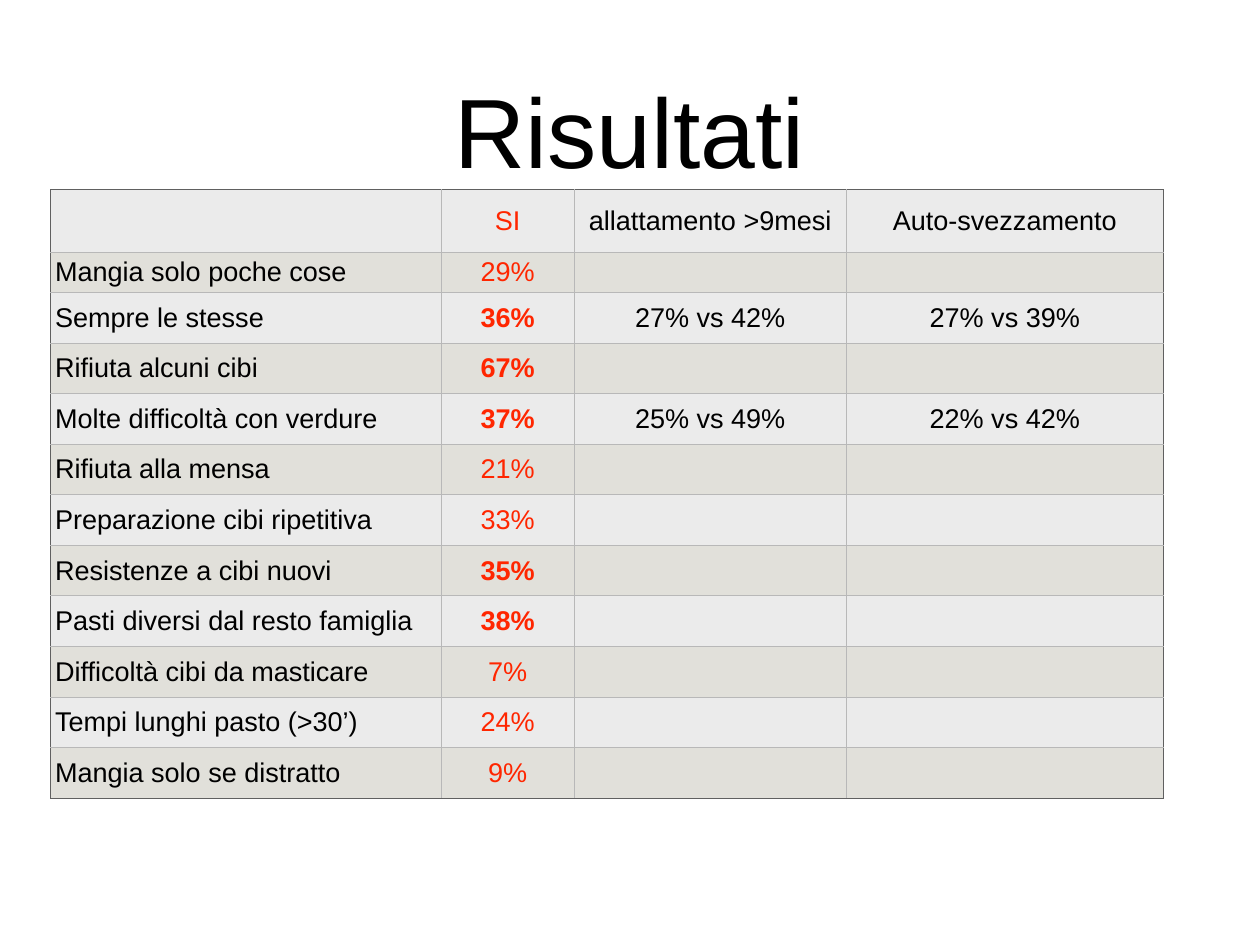
"""Build the "Risultati" slide: a title above a table of survey results."""
from lxml.etree import SubElement
from pptx import Presentation
from pptx.dml.color import RGBColor
from pptx.enum.text import MSO_ANCHOR as ANCHOR, PP_ALIGN as ALIGN
from pptx.oxml.ns import qn
from pptx.util import Cm, Pt

BLACK = RGBColor(0x00, 0x00, 0x00)
RED = RGBColor(0xFF, 0x26, 0x00)
LIGHT = RGBColor(0xEB, 0xEB, 0xEB)
SAND = RGBColor(0xE1, 0xE0, 0xDA)
OUTER = RGBColor(0x60, 0x60, 0x60)
INNER = RGBColor(0xB8, 0xB8, 0xB8)
INSET = Cm(0.13)

ROWS = [
    ("", "SI", "allattamento >9mesi", "Auto-svezzamento"),
    ("Mangia solo poche cose", "29%", "", ""),
    ("Sempre le stesse", "36%", "27% vs 42%", "27% vs 39%"),
    ("Rifiuta alcuni cibi", "67%", "", ""),
    ("Molte difficoltà con verdure", "37%", "25% vs 49%", "22% vs 42%"),
    ("Rifiuta alla mensa", "21%", "", ""),
    ("Preparazione cibi ripetitiva", "33%", "", ""),
    ("Resistenze a cibi nuovi", "35%", "", ""),
    ("Pasti diversi dal resto famiglia", "38%", "", ""),
    ("Difficoltà cibi da masticare", "7%", "", ""),
    ("Tempi lunghi pasto (>30’)", "24%", "", ""),
    ("Mangia solo se distratto", "9%", "", ""),
]
BOLD = {"36%", "67%", "37%", "35%", "38%"}
COL_WIDTHS = [11.2, 3.81, 7.8, 9.09]
ROW_HEIGHTS = [1.8, 1.15] + [1.45] * (len(ROWS) - 2)


def add_run(p, text, size, color, bold=False):
    r = p.add_run()
    r.text = text
    r.font.name = "Arial"
    r.font.size = Pt(size)
    r.font.bold = bold
    r.font.color.rgb = color


def add_border(cell, side, color):
    ln = SubElement(cell._tc.get_or_add_tcPr(), qn(f"a:ln{side}"), w=str(Pt(1)))
    fill = SubElement(ln, qn("a:solidFill"))
    SubElement(fill, qn("a:srgbClr"), val=str(color))


prs = Presentation()
prs.slide_width, prs.slide_height = Cm(36.12), Cm(27.1)
s = prs.slides.add_slide(prs.slide_layouts[5])

title = s.shapes.title
title.left, title.top, title.width, title.height = Cm(2.64), Cm(0.71), Cm(30.84), Cm(6)
tf = title.text_frame
tf.vertical_anchor = ANCHOR.MIDDLE
p = tf.paragraphs[0]
p.alignment = ALIGN.CENTER
add_run(p, "Risultati", 80, BLACK)

table = s.shapes.add_table(len(ROWS), len(COL_WIDTHS), Cm(1.45), Cm(5.44),
                           Cm(sum(COL_WIDTHS)), Cm(sum(ROW_HEIGHTS))).table
for column, width in zip(table.columns, COL_WIDTHS):
    column.width = Cm(width)
for row, height in zip(table.rows, ROW_HEIGHTS):
    row.height = Cm(height)

last_row, last_col = len(ROWS) - 1, len(COL_WIDTHS) - 1
for i, texts in enumerate(ROWS):
    for j, text in enumerate(texts):
        cell = table.cell(i, j)
        edges = {"L": j == 0, "R": j == last_col, "T": i == 0, "B": i == last_row}
        for side, is_outer in edges.items():
            add_border(cell, side, OUTER if is_outer else INNER)
        cell.fill.solid()
        cell.fill.fore_color.rgb = SAND if i % 2 else LIGHT
        cell.vertical_anchor = ANCHOR.MIDDLE
        cell.margin_left = cell.margin_right = INSET
        cell.margin_top = cell.margin_bottom = INSET
        if text:
            p = cell.text_frame.paragraphs[0]
            p.alignment = ALIGN.CENTER if j else ALIGN.LEFT
            add_run(p, text, 22, RED if j == 1 else BLACK, text in BOLD)

prs.save("out.pptx")
